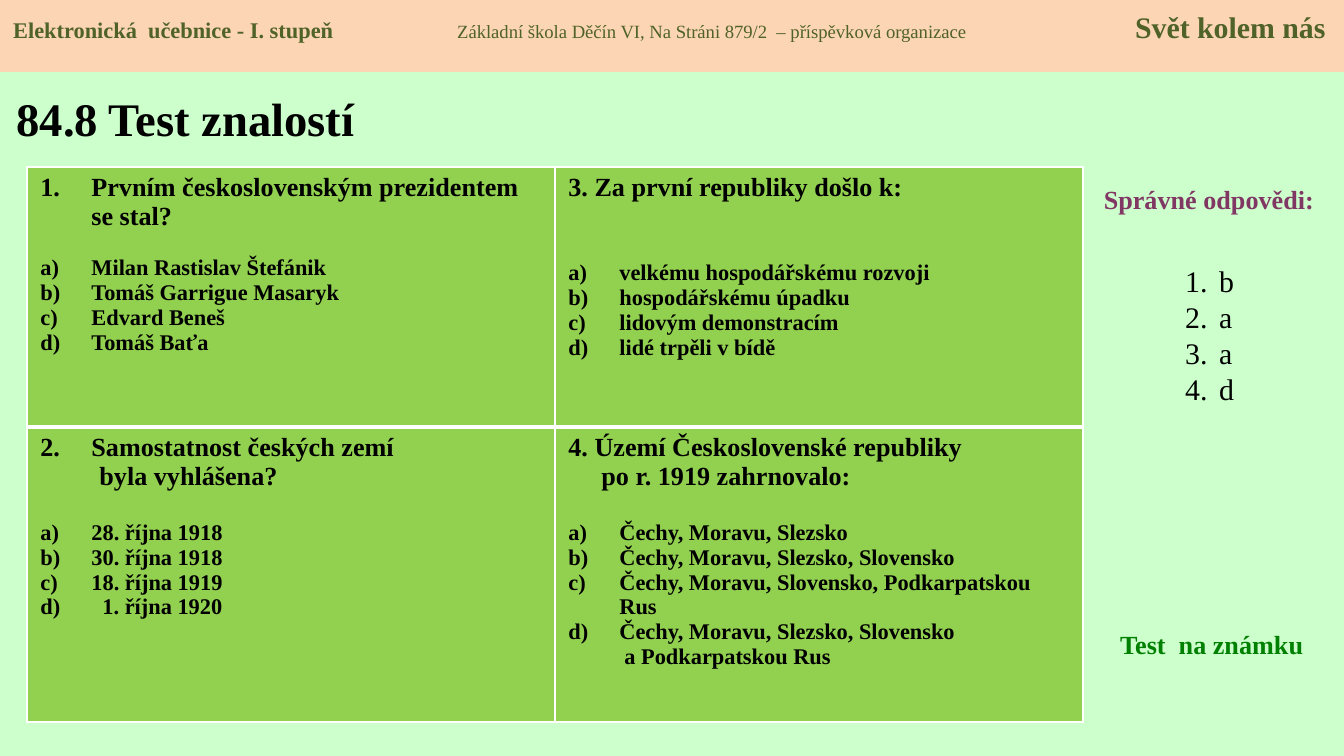
from lxml import etree
from pptx import Presentation
from pptx.dml.color import RGBColor
from pptx.enum.shapes import MSO_SHAPE
from pptx.enum.text import MSO_ANCHOR, PP_ALIGN
from pptx.oxml.ns import qn
from pptx.util import Pt

PX = 6804  # EMU in one px (134.4 px to the inch)
TOP, MIDDLE = MSO_ANCHOR.TOP, MSO_ANCHOR.MIDDLE
LEFT, CENTER = PP_ALIGN.LEFT, PP_ALIGN.CENTER
RECT = MSO_SHAPE.RECTANGLE
FONT = "Times New Roman"
GREEN, PEACH, OLIVE, WHITE = "92D050", "FCD5B5", "4F6228", "FFFFFF"

# Content
TITLE = "84.8 Test znalostí"
HEADER = [  # text, size, bold
    ("Elektronická  učebnice - I. stupeň", 12, True),
    ("\tZákladní škola Děčín VI, Na Stráni 879/2  – příspěvková organizace", 10, False),
    ("\tSvět kolem nás", 16, True),
]
HEADER_TABS = [444, 1122]
LABELS = [  # text, box, colour, alignment
    ("Správné odpovědi:", (1082, 177, 254, 46), "813763", CENTER),
    ("Test  na známku", (1107, 622, 211, 46), "008000", LEFT),
]
ANSWERS = ["b", "a", "a", "d"]

# Question lines and options: text, left margin, number (None for plain text)
# gap is the space in points above the options
HANG = 51
QUESTIONS = [
    [dict(lines=[("Prvním československým prezidentem se stal?", HANG, 1)], gap=13,
          options=[("Milan Rastislav Štefánik", HANG, 1), ("Tomáš Garrigue Masaryk", HANG, 2),
                   ("Edvard Beneš", HANG, 3), ("Tomáš Baťa", HANG, 4)]),
     dict(lines=[("3. Za první republiky došlo k:", 0, None)], gap=31,
          options=[("velkému hospodářskému rozvoji", HANG, 1), ("hospodářskému úpadku", HANG, 2),
                   ("lidovým demonstracím", HANG, 3), ("lidé trpěli v bídě", HANG, 4)])],
    [dict(lines=[("Samostatnost českých zemí", HANG, 2), ("byla vyhlášena?", 59, None)], gap=15.5,
          options=[("28. října 1918", HANG, 1), ("30. října 1918", HANG, 2),
                   ("18. října 1919", HANG, 3), ("1. října 1920", 62, 4)]),
     dict(lines=[("4. Území Československé republiky", 0, None),
                 ("po r. 1919 zahrnovalo:", 33, None)], gap=15.5,
          options=[("Čechy, Moravu, Slezsko", HANG, 1),
                   ("Čechy, Moravu, Slezsko, Slovensko", HANG, 2),
                   ("Čechy, Moravu, Slovensko, Podkarpatskou Rus", HANG, 3),
                   ("Čechy, Moravu, Slezsko, Slovensko", HANG, 4),
                   ("a Podkarpatskou Rus", 56, None)])],
]
TABLE_BOX = (27, 167, 1056, 555)
ROW_HEIGHTS = [260, 295]


def rgb(value):
    return RGBColor.from_string(value)


def emu(box):
    return [v * PX for v in box]


def add_run(p, text, size, color="000000", bold=True):
    r = p.add_run()
    r.text = text
    for key, value in dict(name=FONT, size=Pt(size), bold=bold).items():
        setattr(r.font, key, value)
    r.font.color.rgb = rgb(color)


def next_paragraph(tf):
    first = tf.paragraphs[0]
    return tf.add_paragraph() if first.runs else first


def set_list(p, margin, scheme=None, start=1):
    pPr = p._p.get_or_add_pPr()
    pPr.set("marL", str(margin * PX))
    pPr.set("indent", str(-margin * PX if scheme else 0))
    if scheme:
        etree.SubElement(pPr, qn("a:buFont"), typeface="+mj-lt")
        etree.SubElement(pPr, qn("a:buAutoNum"), type=scheme, startAt=str(start))


def add_textbox(box):
    tf = slide.shapes.add_textbox(*emu(box)).text_frame
    tf.word_wrap = True
    return tf


def set_borders(cell, bottom, top):
    tcPr = cell._tc.get_or_add_tcPr()
    for i, (side, width) in enumerate([("L", 1), ("R", 1), ("T", top), ("B", bottom)]):
        ln = etree.Element(qn(f"a:ln{side}"), w=str(Pt(width)))
        fill = etree.SubElement(ln, qn("a:solidFill"))
        etree.SubElement(fill, qn("a:srgbClr"), val=WHITE)
        tcPr.insert(i, ln)


prs = Presentation()
prs.slide_width, prs.slide_height = 1344 * PX, 756 * PX
slide = prs.slides.add_slide(prs.slide_layouts[5])
slide.background.fill.solid()
slide.background.fill.fore_color.rgb = rgb("CCFFCC")

# Title
title = slide.shapes.title
title.left, title.top, title.width, title.height = emu((3, 74, 429, 87))
title.text_frame.vertical_anchor = MIDDLE
p = title.text_frame.paragraphs[0]
p.alignment = LEFT
add_run(p, TITLE, 25)

# Side labels
for text, box, color, align in LABELS:
    p = add_textbox(box).paragraphs[0]
    p.alignment = align
    add_run(p, text, 14, color)

# Question table
table = slide.shapes.add_table(2, 2, *emu(TABLE_BOX)).table
for row, height in zip(table.rows, ROW_HEIGHTS):
    row.height = height * PX
for i, row in enumerate(QUESTIONS):
    for j, question in enumerate(row):
        cell = table.cell(i, j)
        cell.fill.solid()
        cell.fill.fore_color.rgb = rgb(GREEN)
        set_borders(cell, bottom=1 if i else 3, top=3 if i else 1)
        for part, size, scheme in [("lines", 14, "arabicPeriod"), ("options", 12, "alphaLcParenR")]:
            for k, (text, margin, number) in enumerate(question[part]):
                p = next_paragraph(cell.text_frame)
                if part == "options" and k == 0:
                    p.space_before = Pt(question["gap"])
                set_list(p, margin, scheme if number else None, number)
                add_run(p, text, size)

# Answers
tf = add_textbox((1172, 222, 74, 267))
tf.margin_top = 41 * PX
for text in ANSWERS:
    p = next_paragraph(tf)
    set_list(p, 34, "arabicPeriod")
    add_run(p, text, 16, bold=False)

# Header bar
bar = slide.shapes.add_shape(RECT, *emu((0, 0, 1344, 72)))
bar.shadow.inherit = False
bar.fill.solid()
bar.fill.fore_color.rgb = rgb(PEACH)
bar.line.fill.background()
tf = bar.text_frame
for key, value in dict(vertical_anchor=TOP, margin_top=9 * PX, margin_right=0).items():
    setattr(tf, key, value)
p = tf.paragraphs[0]
p.alignment = LEFT
tabs = etree.SubElement(p._p.get_or_add_pPr(), qn("a:tabLst"))
for pos in HEADER_TABS:
    etree.SubElement(tabs, qn("a:tab"), pos=str(pos * PX), algn="l")
for text, size, bold in HEADER:
    add_run(p, text, size, OLIVE, bold)

prs.save("out.pptx")
